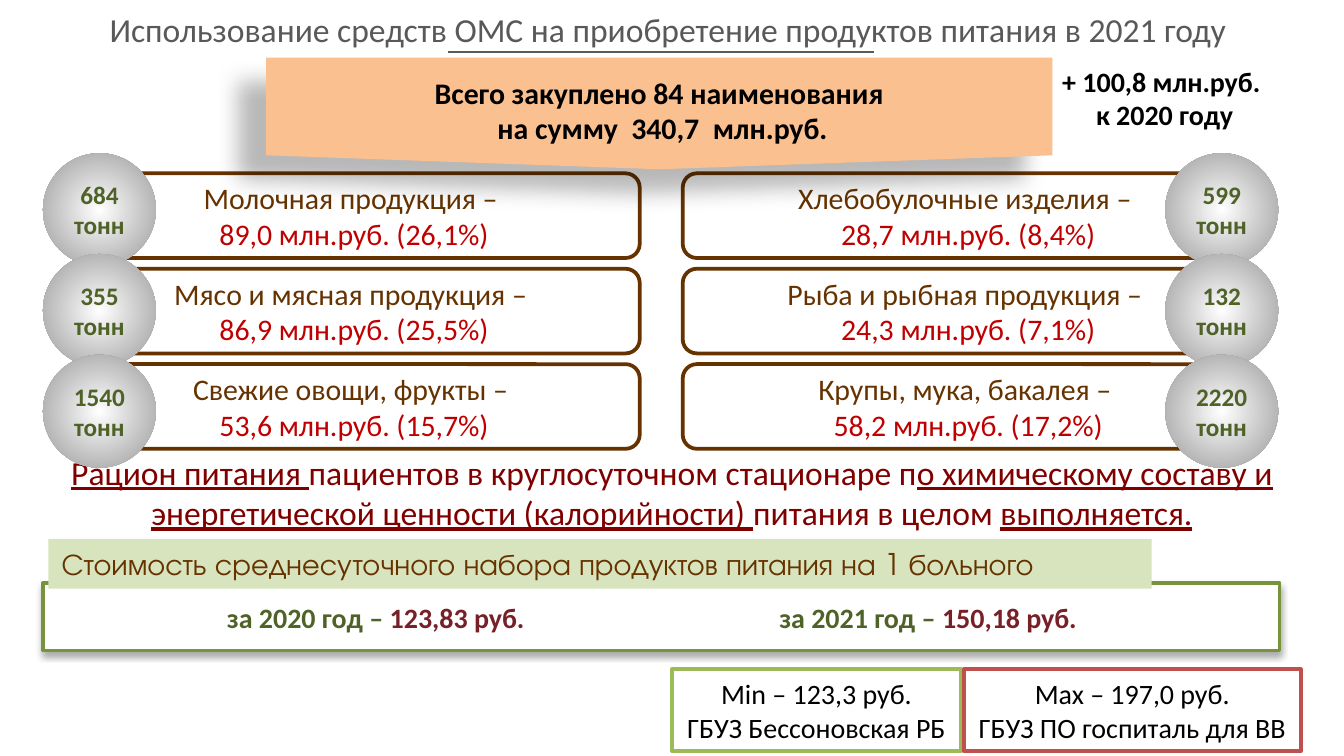
from lxml.etree import SubElement
from pptx import Presentation
from pptx.dml.color import RGBColor
from pptx.enum.shapes import MSO_CONNECTOR, MSO_SHAPE
from pptx.enum.text import MSO_ANCHOR, MSO_AUTO_SIZE, PP_ALIGN
from pptx.oxml.ns import qn
from pptx.util import Inches, Pt

BROWN, GREEN, RED = "663300", "4F6228", "C00000"
MAROON, WINE, BLACK, WHITE = "800000", "782028", "000000", "FFFFFF"

# A 16:9 slide
presentation = Presentation()
presentation.slide_width = Inches(10)
presentation.slide_height = presentation.slide_width * 9 // 16
slide = presentation.slides.add_slide(presentation.slide_layouts[5])


def draw(kind, box, fill=None, line=None, shadow=None):
    """Add a shape; shadow is (opacity %, blur pt, distance pt, degrees)."""
    shape = slide.shapes.add_shape(kind, *map(Inches, box))
    shape.shadow.inherit = False
    if fill:
        shape.fill.solid()
        shape.fill.fore_color.rgb = RGBColor.from_string(fill)
    else:
        shape.fill.background()
    if line:
        shape.line.color.rgb = RGBColor.from_string(line)
        shape.line.width = Pt(2)
    else:
        shape.line.fill.background()
    if shadow:
        opacity, blur, distance, angle = shadow
        effects = shape._element.spPr.find(qn("a:effectLst"))
        outer = SubElement(effects, qn("a:outerShdw"), blurRad=str(Pt(blur)), dist=str(Pt(distance)),
                           dir=str(angle * 60000), algn="ctr", rotWithShape="0")
        color = SubElement(outer, qn("a:srgbClr"), val=BLACK)
        SubElement(color, qn("a:alpha"), val=str(opacity * 1000))
    return shape


def write(shape, paragraphs, size, bold=False, align=PP_ALIGN.CENTER, font="Calibri", wrap=True):
    """Fill a shape with paragraphs of (text, colour, underline) runs."""
    frame = shape.text_frame
    frame.auto_size = MSO_AUTO_SIZE.NONE
    frame.word_wrap = wrap
    for index, runs in enumerate(paragraphs):
        paragraph = frame.add_paragraph() if index else frame.paragraphs[0]
        paragraph.alignment = align
        for text, color, *underline in runs:
            run = paragraph.add_run()
            run.text = text
            run.font.name, run.font.size, run.font.bold = font, Pt(size), bold
            run.font.underline = bool(underline)
            run.font.color.rgb = RGBColor.from_string(color)
    return frame


# Title and the rule under it
title = slide.shapes.title
title.left, title.top, title.width, title.height = map(Inches, (0.16, 0.05, 9.68, 0.33))
frame = write(title, [[("Использование средств ОМС на приобретение продуктов питания в 2021 году ", "595959")]], 18)
frame.vertical_anchor = MSO_ANCHOR.MIDDLE
rule = slide.shapes.add_connector(MSO_CONNECTOR.STRAIGHT, Inches(3.33), Inches(0.39), Inches(6.5), Inches(0.39))
rule.line.color.rgb = RGBColor.from_string("595959")
rule.line.width = Pt(1)
SubElement(rule._element.spPr, qn("a:effectLst"))

# Product cards: two columns of three
columns = [
    (0.51, 0.32, [("Молочная продукция – ", "89,0 млн.руб. (26,1%)", "684 тонн"),
                  ("Мясо и мясная продукция – ", "86,9 млн.руб. (25,5%)", "355 тонн"),
                  ("Свежие овощи, фрукты – ", "53,6 млн.руб. (15,7%)", "1540 тонн")]),
    (5.08, 8.67, [("Хлебобулочные изделия – ", "28,7 млн.руб. (8,4%)", "599 тонн"),
                  ("Рыба и рыбная продукция – ", "24,3 млн.руб. (7,1%)", "132 тонн"),
                  ("Крупы, мука, бакалея – ", "58,2 млн.руб. (17,2%)", "2220 тонн")]),
]
for card_left, _, products in columns:
    for row, (name, cost, _) in enumerate(products):
        card = draw(MSO_SHAPE.ROUNDED_RECTANGLE, (card_left, 1.29 + 0.71 * row, 4.25, 0.63), line=BROWN)
        write(card, [[(name, BROWN)], [(cost, RED)]], 16)

# Change against the previous year
change = slide.shapes.add_textbox(*map(Inches, (7.42, 0.43, 2.49, 0.61)))
write(change, [[("+ 100,8 млн.руб. ", BLACK)], [("к 2020 году", BLACK)]], 15, bold=True)

# Total banner, a pentagon pointing down
banner = draw(MSO_SHAPE.PENTAGON, (4.49, -2.08, 0.83, 5.85), "FAC090", shadow=(28, 11.8, 19.7, 141))
banner.adjustments[0] = 0.125
banner.rotation = 90
frame = write(banner, [[("Всего закуплено 84 наименования", BLACK)],
                       [(" на сумму  340,7  млн.руб.", BLACK)]], 16, bold=True)
frame._txBody.bodyPr.set("vert", "vert270")

# Conclusion on the ration
ration = slide.shapes.add_textbox(*map(Inches, (0, 3.31, 10, 0.71)))
write(ration, [[("Рацион питания ", MAROON, True),
                ("пациентов в круглосуточном стационаре п", MAROON),
                ("о химическому составу и энергетической ценности (калорийности) ", MAROON, True),
                ("питания в целом ", MAROON),
                ("выполняется.", MAROON, True)]], 18)

# Daily cost by year, set on two tab stops
daily_cost = draw(MSO_SHAPE.RECTANGLE, (0.32, 4.34, 9.2, 0.5), WHITE, "77933C", (32, 3.5, 2.2, 90))
properties = daily_cost.text_frame.paragraphs[0]._p.get_or_add_pPr()
tab_stops = SubElement(properties, qn("a:tabLst"))
for position in (1.27, 5.38):
    SubElement(tab_stops, qn("a:tab"), pos=str(Inches(position)), algn="l")
write(daily_cost, [[("\tза 2020 год – ", GREEN), ("123,83 руб.", WINE),
                    ("\tза 2021 год – ", GREEN), ("150,18 руб.", WINE)]], 15, bold=True, align=PP_ALIGN.LEFT)
heading = draw(MSO_SHAPE.RECTANGLE, (0.36, 4.01, 8.21, 0.37), "D7E4BD")
write(heading, [[("Стоимость среднесуточного набора продуктов питания на 1 больного", BROWN)]], 16,
      align=PP_ALIGN.LEFT, font="TeX Gyre Adventor", wrap=False)

# Tonnage discs with a radial gradient
for _, disc_left, products in columns:
    for row, (_, _, tonnage) in enumerate(products):
        disc = draw(MSO_SHAPE.OVAL, (disc_left, 1.14 + 0.75 * row, 0.84, 0.84))
        disc.fill.gradient()
        for position, (stop, color) in enumerate(zip(disc.fill.gradient_stops, (WHITE, "979797"))):
            stop.color.rgb = RGBColor.from_string(color)
            stop.position = position
        gradient = disc._element.spPr.find(qn("a:gradFill"))
        gradient.remove(gradient.find(qn("a:lin")))
        circle = SubElement(gradient, qn("a:path"), path="circle")
        SubElement(circle, qn("a:fillToRect"), l="50000", t="50000", r="50000", b="50000")
        frame = write(disc, [[(tonnage, GREEN)]], 13.5, bold=True)
        frame.margin_left = frame.margin_right = 0

# Lowest and highest cost
for left, width, color, cost, hospital in [
    (5, 2.15, "9BBB59", "Min – 123,3 руб.", "ГБУЗ Бессоновская РБ"),
    (7.17, 2.51, "C0504D", "Max – 197,0 руб.", "ГБУЗ ПО госпиталь для ВВ"),
]:
    extreme = draw(MSO_SHAPE.RECTANGLE, (left, 4.98, width, 0.61), WHITE, color)
    write(extreme, [[(cost, BLACK)], [(hospital, BLACK)]], 15, wrap=False)

presentation.save("out.pptx")
